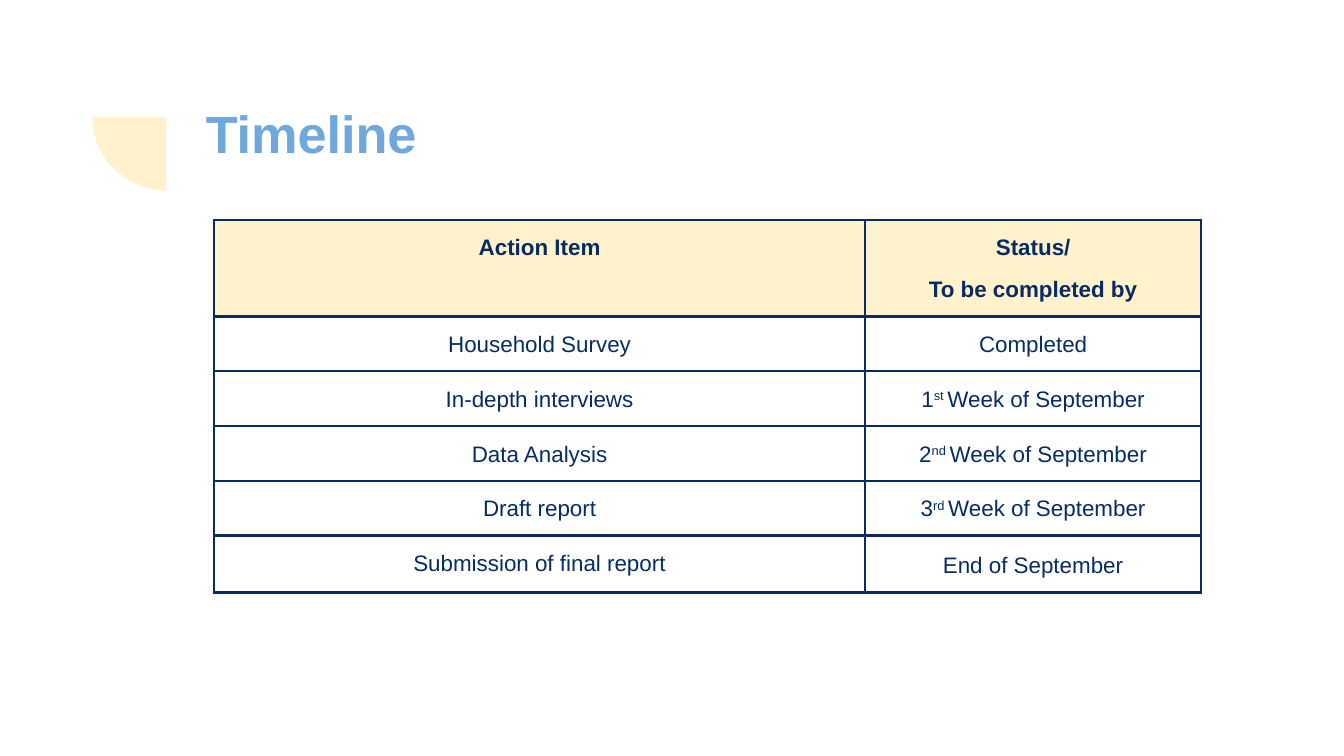
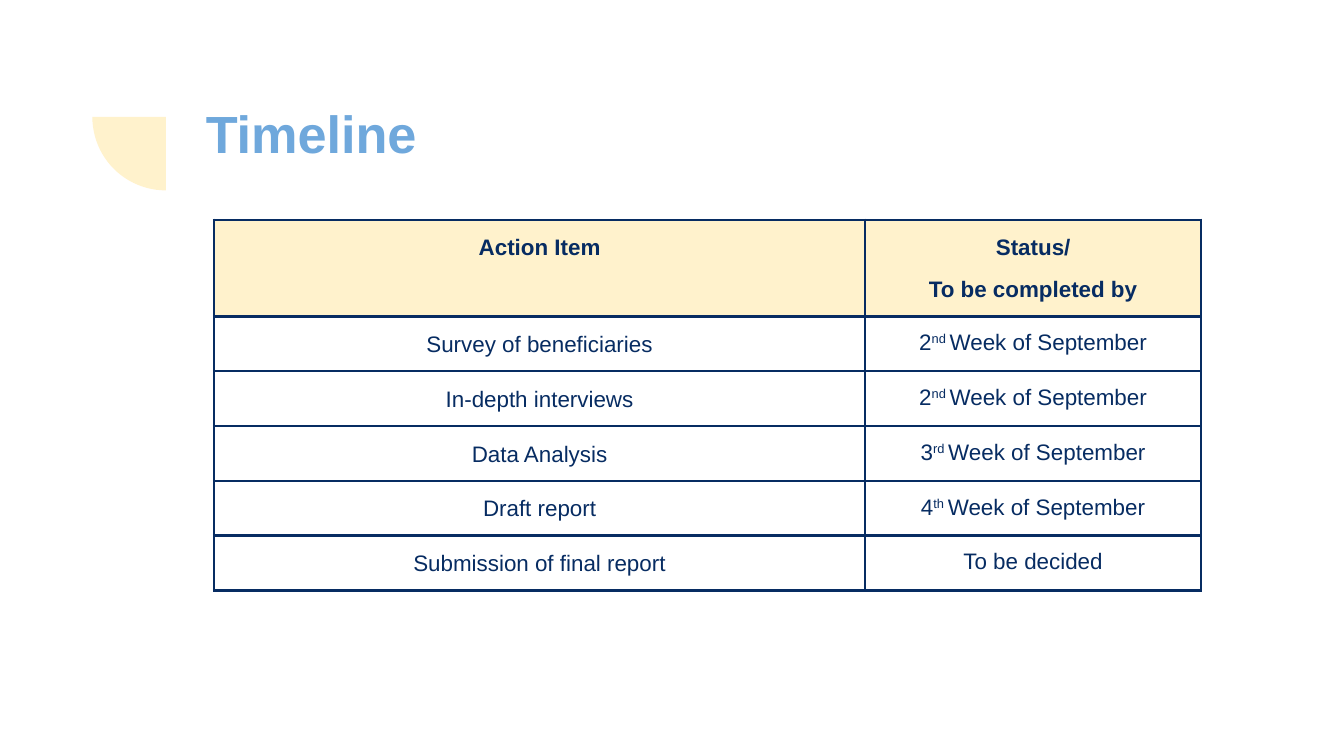
from lxml.etree import SubElement
from pptx import Presentation
from pptx.dml.color import RGBColor
from pptx.enum.shapes import MSO_SHAPE
from pptx.enum.text import MSO_ANCHOR, MSO_AUTO_SIZE, PP_ALIGN
from pptx.oxml.ns import qn
from pptx.util import Emu, Pt

PX = 9525
NAVY = RGBColor(0x07, 0x2C, 0x62)
SKY = RGBColor(0x6F, 0xA8, 0xDC)
CREAM = RGBColor(0xFF, 0xF2, 0xCC)
FONT = "Arial"
INSET = Emu(10 * PX)
COLUMN_WIDTHS = [465, 240]
ROW_HEIGHTS = [18, 22, 22, 22, 22, 20]
HEADER = ["Action Item", "Status/\nTo be completed by"]

TIMELINES = [
    [
        ("Household Survey", "Completed", 1.07, 8),
        ("In-depth interviews", "1|st |Week of September", 1.07, 8),
        ("Data Analysis", "2|nd |Week of September", 1.07, 8),
        ("Draft report", "3|rd |Week of September", 1.07, 8),
        ("Submission of final report", "End of September", 1.15, 0),
    ],
    [
        ("Survey of beneficiaries", "2|nd |Week of September", 1.0, 0),
        ("In-depth interviews", "2|nd |Week of September", 1.0, 0),
        ("Data Analysis", "3|rd |Week of September", 1.0, 0),
        ("Draft report", "4|th |Week of September", 1.0, 0),
        ("Submission of final report", "To be decided", 1.0, 0),
    ],
]


def write(holder, text, size=12, color=NAVY, bold=False, align=PP_ALIGN.CENTER, spacing=1.07, after=8):
    frame = holder.text_frame
    lines = text.split("\n")
    for index, line in enumerate(lines):
        paragraph = frame.paragraphs[0] if index == 0 else frame.add_paragraph()
        paragraph.alignment = align
        paragraph.line_spacing = spacing
        paragraph.space_before = Pt(8 if index else 0)
        paragraph.space_after = Pt(after if index == len(lines) - 1 else 0)
        for position, part in enumerate(line.split("|")):
            run = paragraph.add_run()
            run.text = part
            run.font.name = FONT
            run.font.size = Pt(size)
            run.font.bold = bold
            run.font.color.rgb = color
            if position == 1:
                run.font._element.set("baseline", "30000")


def outline(cell, color=NAVY, width=1.5):
    properties = cell._tc.get_or_add_tcPr()
    for side in ("a:lnL", "a:lnR", "a:lnT", "a:lnB"):
        line = SubElement(properties, qn(side), w=str(Pt(width)))
        fill = SubElement(line, qn("a:solidFill"))
        SubElement(fill, qn("a:srgbClr"), val=str(color))


presentation = Presentation()
presentation.slide_width = Emu(960 * PX)
presentation.slide_height = Emu(540 * PX)

for timeline in TIMELINES:
    slide = presentation.slides.add_slide(presentation.slide_layouts[5])

    quarter = slide.shapes.add_shape(MSO_SHAPE.PIE, 66 * PX, 31 * PX, 105 * PX, 105 * PX)
    quarter.adjustments[0] = 108
    quarter.adjustments[1] = 162
    quarter.rotation = 270
    quarter.shadow.inherit = False
    quarter.fill.solid()
    quarter.fill.fore_color.rgb = CREAM
    quarter.line.fill.background()

    title = slide.shapes.title
    title.left, title.top = Emu(137 * PX), Emu(62 * PX)
    title.width, title.height = Emu(738 * PX), Emu(105 * PX)
    frame = title.text_frame
    frame.auto_size = MSO_AUTO_SIZE.NONE
    frame.vertical_anchor = MSO_ANCHOR.TOP
    frame.margin_left = frame.margin_right = frame.margin_top = frame.margin_bottom = INSET
    write(title, "Timeline", size=28, color=SKY, bold=True, align=PP_ALIGN.LEFT, spacing=1.0, after=0)

    table = slide.shapes.add_table(
        len(ROW_HEIGHTS), len(COLUMN_WIDTHS), 153 * PX, 157 * PX,
        sum(COLUMN_WIDTHS) * PX, sum(ROW_HEIGHTS) * PX,
    ).table
    table.horz_banding = False
    for column, width in zip(table.columns, COLUMN_WIDTHS):
        column.width = Emu(width * PX)
    for row, height in zip(table.rows, ROW_HEIGHTS):
        row.height = Emu(height * PX)

    for cell in table.iter_cells():
        cell.margin_left = cell.margin_right = cell.margin_top = cell.margin_bottom = INSET
        outline(cell)
        cell.fill.background()

    for cell, heading in zip(table.rows[0].cells, HEADER):
        cell.fill.solid()
        cell.fill.fore_color.rgb = CREAM
        write(cell, heading, bold=True)

    for index, (action, status, spacing, after) in enumerate(timeline, start=1):
        write(table.cell(index, 0), action)
        write(table.cell(index, 1), status, spacing=spacing, after=after)

presentation.save("out.pptx")
